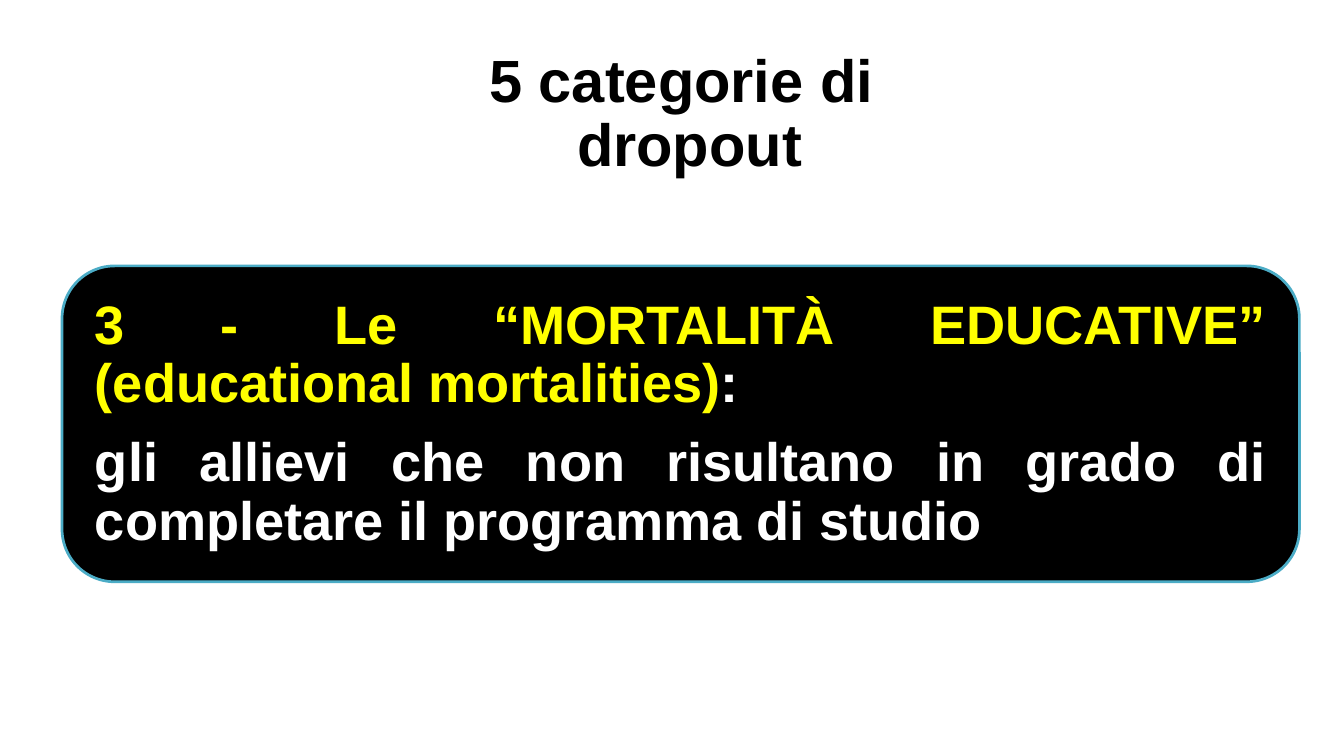
from pptx import Presentation
from pptx.dml.color import RGBColor
from pptx.enum.shapes import MSO_SHAPE
from pptx.enum.text import MSO_ANCHOR, PP_ALIGN
from pptx.util import Inches, Pt

BLACK = RGBColor(0x00, 0x00, 0x00)
WHITE = RGBColor(0xFF, 0xFF, 0xFF)
YELLOW = RGBColor(0xFF, 0xFF, 0x00)
TEAL = RGBColor(0x4B, 0xAC, 0xC6)

EMU_PER_PX = Inches(1) / 97.5


def px(*lengths):
    return [round(length * EMU_PER_PX) for length in lengths]


class SlideBuilder:
    font = "Arial"
    line_spacing = 0.9

    def __init__(self, page):
        self.page = page

    def panel(self, parent, bounds, fill, line):
        panel = parent.shapes.add_shape(MSO_SHAPE.ROUNDED_RECTANGLE, *px(*bounds))
        panel.shadow.inherit = False
        panel.fill.solid()
        panel.fill.fore_color.rgb = fill
        panel.line.color.rgb = line
        panel.line.width = Pt(2)

    def text(self, parent, bounds, paragraphs, size, align, inset=(10, 5), space_after=0):
        """Each paragraph is a list of (wording, colour) spans."""
        box = parent.shapes.add_textbox(*px(*bounds))
        frame = box.text_frame
        frame.word_wrap = True
        frame.vertical_anchor = MSO_ANCHOR.MIDDLE
        side, end = px(*inset)
        frame.margin_left = frame.margin_right = side
        frame.margin_top = frame.margin_bottom = end
        for index, spans in enumerate(paragraphs):
            para = frame.add_paragraph() if index else frame.paragraphs[0]
            para.alignment = align
            para.line_spacing = self.line_spacing
            para.space_after = Pt(space_after)
            for wording, colour in spans:
                span = para.add_run()
                span.text = wording
                span.font.name = self.font
                span.font.size = Pt(size)
                span.font.bold = True
                span.font.color.rgb = colour


def main():
    deck = Presentation()
    deck.slide_width = Inches(13.78)
    deck.slide_height = Inches(7.5)
    page = deck.slides.add_slide(deck.slide_layouts[6])
    builder = SlideBuilder(page)

    category = page.shapes.add_group_shape()
    builder.panel(category, (62, 266, 1237, 316), BLACK, TEAL)
    builder.text(
        category, (78, 282, 1205, 286),
        [
            [("3 - Le “MORTALITÀ EDUCATIVE” (educational mortalities)", YELLOW),
             (": ", WHITE)],
            [("gli allievi che non risultano in grado di completare "
              "il programma di studio", WHITE)],
        ],
        size=40, align=PP_ALIGN.JUSTIFY, inset=(17, 17), space_after=15,
    )
    builder.text(
        page, (233, 45, 913, 141),
        [[("5 categorie di ", BLACK)], [("dropout", BLACK)]],
        size=44, align=PP_ALIGN.CENTER,
    )
    deck.save("out.pptx")


if __name__ == "__main__":
    main()
